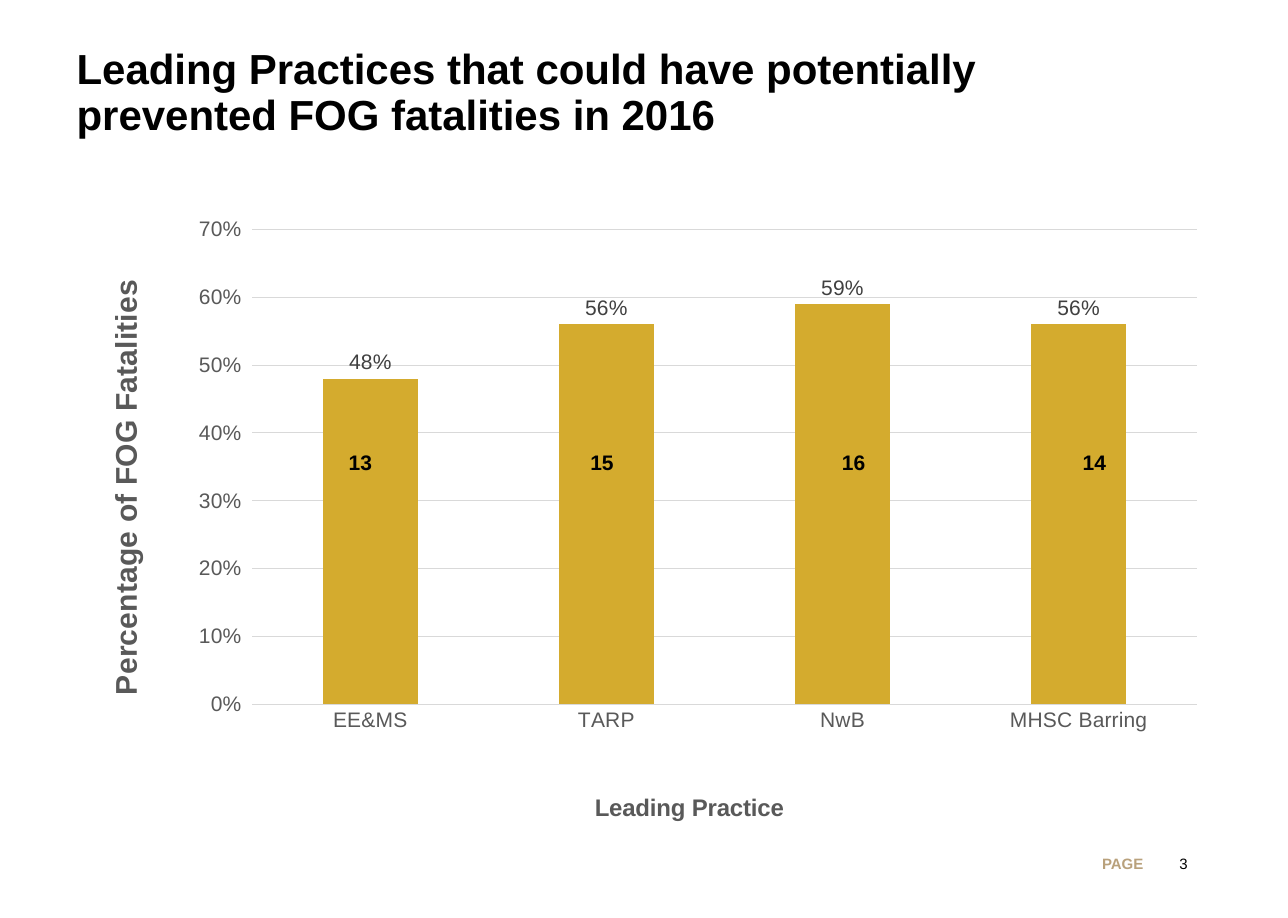
from lxml import etree
from pptx import Presentation
from pptx.chart.data import CategoryChartData
from pptx.dml.color import RGBColor
from pptx.enum.chart import XL_CHART_TYPE, XL_LABEL_POSITION, XL_TICK_MARK
from pptx.enum.text import MSO_ANCHOR, MSO_AUTO_SIZE, PP_ALIGN
from pptx.oxml.ns import qn
from pptx.util import Pt

COLUMNS = XL_CHART_TYPE.COLUMN_CLUSTERED
LABEL_ABOVE = XL_LABEL_POSITION.OUTSIDE_END
TICK_NONE, TICK_OUT = XL_TICK_MARK.NONE, XL_TICK_MARK.OUTSIDE
MIDDLE = MSO_ANCHOR.MIDDLE
NO_FIT = MSO_AUTO_SIZE.NONE
LEFT, RIGHT = PP_ALIGN.LEFT, PP_ALIGN.RIGHT

FONT = "Arial"
BLACK, GREY, DARK_GREY, RULE = "000000", "595959", "404040", "D9D9D9"
GOLD, TAN = "D4AB2E", "B9A17C"

SHARES = {"EE&MS": 0.48, "TARP": 0.56, "NwB": 0.59, "MHSC Barring": 0.56}
COUNTS = [("13", 225.4), ("15", 386.6), ("16", 554.4), ("14", 715)]


def color(hex_code):
    return RGBColor.from_string(hex_code)


def style_font(font, size, hex_code, bold=False):
    font.name = FONT
    font.size = Pt(size)
    font.bold = bold
    font.color.rgb = color(hex_code)


def place(shape, left, top, width, height):
    shape.left, shape.top = Pt(left), Pt(top)
    shape.width, shape.height = Pt(width), Pt(height)


def add_title(slide, text):
    title = slide.shapes.title
    place(title, 43.9, 7.9, 770.4, 109.4)
    frame = title.text_frame
    frame.text = text
    frame.auto_size = NO_FIT
    frame.vertical_anchor = MIDDLE
    para = frame.paragraphs[0]
    para.alignment = LEFT
    para.line_spacing = 0.9
    for run in para.runs:
        style_font(run.font, 28, BLACK, True)


def add_text(slide, text, bounds, size, hex_code=BLACK, bold=False,
             alignment=LEFT, wrap=True):
    box = slide.shapes.add_textbox(*[Pt(value) for value in bounds])
    box.text_frame.word_wrap = wrap
    box.text_frame.text = text
    para = box.text_frame.paragraphs[0]
    para.alignment = alignment
    style_font(para.runs[0].font, size, hex_code, bold)


def set_layout(parent, index, **settings):
    """Give a chart part a manual layout, as fractions of the chart."""
    for old in parent.findall(qn("c:layout")):
        parent.remove(old)
    layout = etree.Element(qn("c:layout"))
    manual = etree.SubElement(layout, qn("c:manualLayout"))
    for name, value in settings.items():
        etree.SubElement(manual, qn(f"c:{name}")).set("val", str(value))
    parent.insert(index, layout)


def style_axis(axis, title, title_size, x, y, tick_mark):
    style_font(axis.tick_labels.font, 14, GREY)
    axis.major_tick_mark = tick_mark
    axis.minor_tick_mark = TICK_NONE
    frame = axis.axis_title.text_frame
    frame.text = title
    style_font(frame.paragraphs[0].runs[0].font, title_size, GREY, True)
    set_layout(axis.axis_title._element, 1,
               xMode="edge", yMode="edge", x=x, y=y)


def style_rule(line):
    line.color.rgb = color(RULE)
    line.width = Pt(0.75)


def add_share_chart(slide):
    data = CategoryChartData(number_format="0%")
    data.categories = list(SHARES)
    data.add_series("Series 1", list(SHARES.values()))
    chart = slide.shapes.add_chart(
        COLUMNS, Pt(43.9), Pt(127.4), Pt(777.6), Pt(427.7), data).chart
    chart.has_legend = False
    chart.has_title = False
    style_font(chart.font, 14, BLACK)

    practices, shares = chart.category_axis, chart.value_axis
    style_axis(practices, "Leading Practice", 16, 0.45, 0.93, TICK_NONE)
    style_rule(practices.format.line)
    style_axis(shares, "Percentage of FOG Fatalities", 20, 0.03, 0.13, TICK_OUT)
    shares.format.line.fill.background()
    shares.minimum_scale, shares.maximum_scale = 0, 0.7
    shares.major_unit = 0.1
    shares.tick_labels.number_format = "0%"
    shares.tick_labels.number_format_is_linked = False
    style_rule(shares.major_gridlines.format.line)

    plot = chart.plots[0]
    plot.gap_width = 150
    plot.vary_by_categories = False
    fill = plot.series[0].format.fill
    fill.solid()
    fill.fore_color.rgb = color(GOLD)
    plot.has_data_labels = True
    labels = plot.data_labels
    labels.show_value = True
    labels.position = LABEL_ABOVE
    labels.number_format = "0%"
    labels.number_format_is_linked = False
    style_font(labels.font, 14, DARK_GREY)
    plot_area = chart._chartSpace.chart.plotArea
    set_layout(plot_area, 0, layoutTarget="inner", xMode="edge", yMode="edge",
               x=0.16, y=0.06, w=0.81, h=0.74)


def main():
    deck = Presentation()
    deck.slide_width, deck.slide_height = Pt(859), Pt(612)
    slide = deck.slides.add_slide(deck.slide_layouts[5])
    add_title(slide, "Leading Practices that could have potentially\v"
                     "prevented FOG fatalities in 2016")
    add_share_chart(slide)
    for count, left in COUNTS:
        add_text(slide, count, (left, 295.9, 34.6, 24.5), 14, bold=True)
    add_text(slide, "PAGE", (727.9, 565.9, 43.2, 19.4), 10, TAN, True,
             wrap=False)
    add_text(slide, "3", (606.2, 565.9, 193, 32.4), 10, alignment=RIGHT)
    deck.save("out.pptx")


if __name__ == "__main__":
    main()
